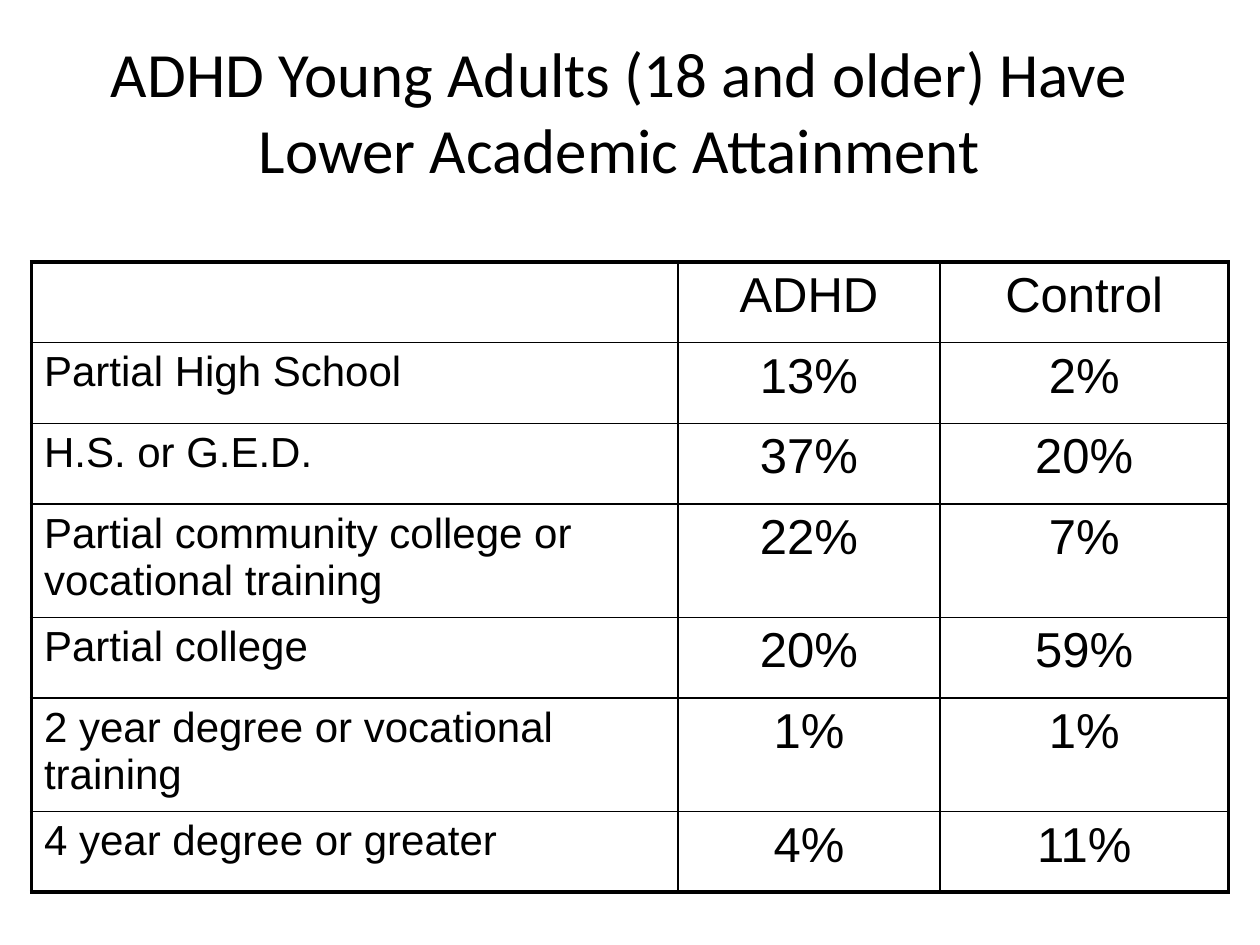
"""Build a slide comparing academic attainment of ADHD and control young adults."""
from dataclasses import dataclass

from lxml import etree
from pptx import Presentation
from pptx import util as u
from pptx.dml.color import RGBColor
from pptx.enum import text
from pptx.oxml import ns


@dataclass(frozen=True)
class Theme:
    ink: str = "000000"
    title_font: str = "Calibri"
    table_font: str = "Arial"
    title_size: int = 36
    value_size: int = 28
    level_size: int = 24
    outer_line: float = 2.25
    inner_line: float = 1


theme = Theme()


def add_text(paragraph, words, font, size, align):
    paragraph.alignment = align
    run = paragraph.add_run()
    run.text = words
    run.font.name = font
    run.font.size = u.Pt(size)
    run.font.color.rgb = RGBColor.from_string(theme.ink)


def add_borders(cell, outer_sides):
    properties = cell._tc.get_or_add_tcPr()
    for order, (side, outer) in enumerate(zip("LRTB", outer_sides)):
        width = theme.outer_line if outer else theme.inner_line
        line = etree.Element(ns.qn(f"a:ln{side}"), w=str(u.Pt(width)))
        fill = etree.SubElement(line, ns.qn("a:solidFill"))
        etree.SubElement(fill, ns.qn("a:srgbClr"), val=theme.ink)
        properties.insert(order, line)


attainment = [
    ("", "ADHD", "Control"),
    ("Partial High School", "13%", "2%"),
    ("H.S. or G.E.D.", "37%", "20%"),
    ("Partial community college or vocational training", "22%", "7%"),
    ("Partial college", "20%", "59%"),
    ("2 year degree or vocational training", "1%", "1%"),
    ("4 year degree or greater", "4%", "11%"),
]
column_widths = [5.13, 2.08, 2.29]
single_row, double_row = 0.64, 0.9
two_line_rows = {3, 5}
row_heights = [double_row if row in two_line_rows else single_row
               for row in range(len(attainment))]

deck = Presentation()
deck.slide_width, deck.slide_height = u.Inches(10), u.Inches(7.5)
slide = deck.slides.add_slide(deck.slide_layouts[6])

heading = slide.shapes.add_textbox(
    u.Inches(0.75), u.Inches(0.25), u.Inches(8.33), u.Inches(1.25)).text_frame
heading.word_wrap = True
heading.vertical_anchor = text.MSO_ANCHOR.MIDDLE
add_text(heading.paragraphs[0],
         "ADHD Young Adults (18 and older) Have Lower Academic Attainment",
         theme.title_font, theme.title_size, text.PP_ALIGN.CENTER)

grid = slide.shapes.add_table(
    len(row_heights), len(column_widths), u.Inches(0.25), u.Inches(2.08),
    u.Inches(sum(column_widths)), u.Inches(sum(row_heights))).table
grid.first_row = grid.horz_banding = False
for column, width in zip(grid.columns, column_widths):
    column.width = u.Inches(width)
for row, height in zip(grid.rows, row_heights):
    row.height = u.Inches(height)

last_row, last_column = len(row_heights) - 1, len(column_widths) - 1
for r, entries in enumerate(attainment):
    for c, entry in enumerate(entries):
        cell = grid.cell(r, c)
        cell.fill.background()
        add_borders(cell, (c == 0, c == last_column, r == 0, r == last_row))
        if entry:
            add_text(cell.text_frame.paragraphs[0], entry, theme.table_font,
                     theme.value_size if c else theme.level_size,
                     text.PP_ALIGN.CENTER if c else text.PP_ALIGN.LEFT)

deck.save("out.pptx")
